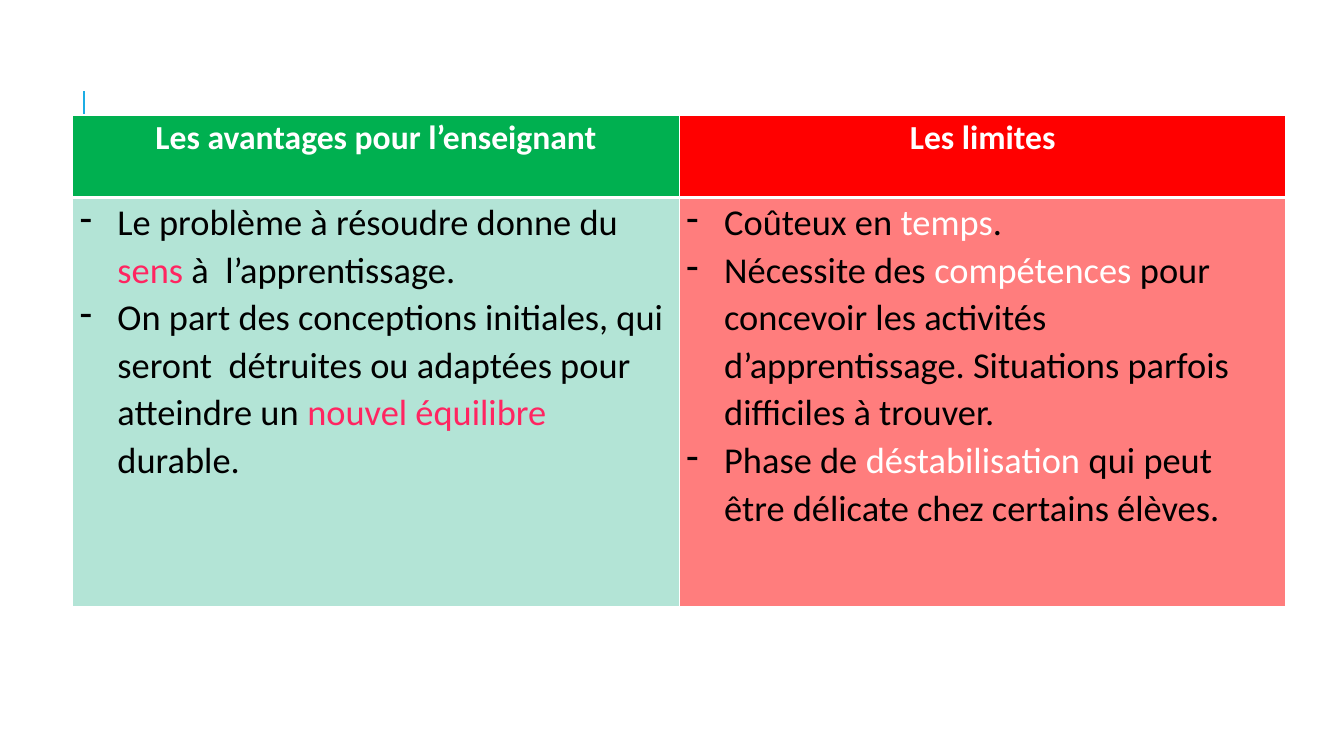
from dataclasses import dataclass

from lxml.etree import SubElement
from pptx import Presentation
from pptx.dml.color import RGBColor as Rgb
from pptx.enum.shapes import MSO_CONNECTOR as Connector
from pptx.enum.text import PP_ALIGN as Align
from pptx.oxml import parse_xml
from pptx.oxml.ns import qn
from pptx.util import Cm, Pt

COLOURS = {
    "accent": "1CADE4",
    "white": "FFFFFF",
    "black": "000000",
    "pink": "FF2561",
    "green": "00B050",
    "pale_green": "B3E4D6",
    "red": "FF0000",
    "pale_red": "FF7D7D",
}
DRAWING = "http://schemas.openxmlformats.org/drawingml/2006/main"
HEADER_HEIGHT, BODY_HEIGHT = 2.08, 10.31
COLUMN_WIDTH = 15.29
BULLET_INDENT = 0.95


@dataclass
class Column:
    heading: str
    header_fill: str
    body_fill: str
    highlight: str
    points: list[tuple[str, str, str]]  # before, highlighted, after


COLUMNS = [
    Column("Les avantages pour l’enseignant", "green", "pale_green", "pink", [
        ("Le problème à résoudre donne du ", "sens", " à  l’apprentissage."),
        ("On part des conceptions initiales, qui seront  détruites ou adaptées "
         "pour atteindre un ", "nouvel équilibre ", "durable."),
    ]),
    Column("Les limites", "red", "pale_red", "white", [
        ("Coûteux en ", "temps", "."),
        ("Nécessite des ", "compétences", " pour concevoir les activités "
         "d’apprentissage. Situations parfois difficiles à trouver."),
        ("Phase de ", "déstabilisation",
         " qui peut être délicate chez certains élèves."),
    ]),
]


def colour(name: str) -> Rgb:
    return Rgb.from_string(COLOURS[name])


def add_span(para, text: str, *, size: float = 26, fill: str = "black",
             bold: bool = False) -> None:
    span = para.add_run()
    span.text = text
    font = span.font
    font.name, font.size, font.bold = "Calibri", Pt(size), bold
    font.color.rgb = colour(fill)


def add_dash(para) -> None:
    properties = para._p.get_or_add_pPr()
    properties.set("marL", str(Cm(BULLET_INDENT)))
    properties.set("indent", str(-Cm(BULLET_INDENT)))
    SubElement(properties, qn("a:buChar")).set("char", "-")


def format_cell(cell, fill: str, top: float, bottom: float) -> None:
    cell.margin_left = cell.margin_right = Cm(0.18)
    cell.margin_top = cell.margin_bottom = 0
    cell.fill.solid()
    cell.fill.fore_color.rgb = colour(fill)
    borders = {"lnL": 1, "lnR": 1, "lnT": top, "lnB": bottom}
    for position, (side, width) in enumerate(borders.items()):
        border = parse_xml(
            f'<a:{side} xmlns:a="{DRAWING}" w="{Pt(width)}"><a:solidFill>'
            f'<a:srgbClr val="{COLOURS["white"]}"/></a:solidFill></a:{side}>')
        cell._tc.get_or_add_tcPr().insert(position, border)


def fill_header(cell, column: Column) -> None:
    format_cell(cell, column.header_fill, top=1, bottom=3)
    para = cell.text_frame.paragraphs[0]
    para.alignment = Align.CENTER
    para.line_spacing, para.space_after = 1.07, Pt(8)
    add_span(para, column.heading, size=24, fill="white", bold=True)


def fill_body(cell, column: Column) -> None:
    format_cell(cell, column.body_fill, top=3, bottom=1)
    frame = cell.text_frame
    for number, (before, highlighted, after) in enumerate(column.points):
        para = frame.add_paragraph() if number else frame.paragraphs[0]
        add_dash(para)
        para.line_spacing = 1.07
        add_span(para, before)
        add_span(para, highlighted, fill=column.highlight)
        add_span(para, after)


def add_accent_line(page) -> None:
    line = page.shapes.add_connector(
        Connector.STRAIGHT, Cm(2.12), Cm(4.83), Cm(2.12), Cm(2.29))
    line.line.color.rgb = colour("accent")
    line.line.width = Pt(1.5)
    SubElement(line._element.spPr, qn("a:effectLst"))


def add_comparison(page) -> None:
    table = page.shapes.add_table(
        2, len(COLUMNS), Cm(1.83), Cm(2.9), Cm(COLUMN_WIDTH * len(COLUMNS)),
        Cm(HEADER_HEIGHT + BODY_HEIGHT)).table
    table.rows[0].height = Cm(HEADER_HEIGHT)
    table.rows[1].height = Cm(BODY_HEIGHT)
    for index, column in enumerate(COLUMNS):
        table.columns[index].width = Cm(COLUMN_WIDTH)
        fill_header(table.cell(0, index), column)
        fill_body(table.cell(1, index), column)


def main() -> None:
    deck = Presentation()
    deck.slide_width, deck.slide_height = Cm(33.87), Cm(19.05)
    page = deck.slides.add_slide(deck.slide_layouts[6])
    # Accent line, partly hidden behind the table
    add_accent_line(page)
    # Advantages and limits side by side
    add_comparison(page)
    deck.save("out.pptx")


if __name__ == "__main__":
    main()
